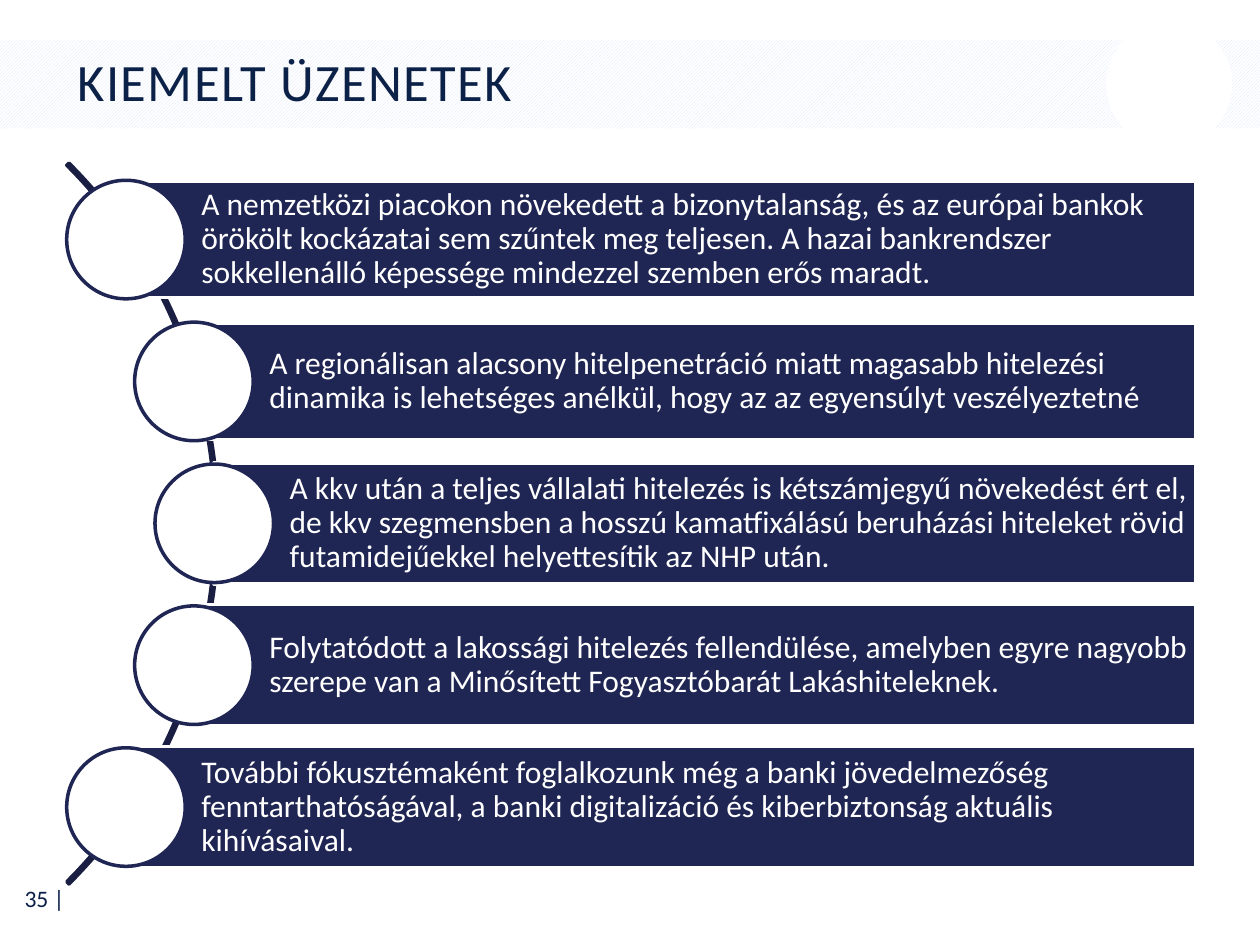
from pptx import Presentation
from pptx.dml.color import RGBColor
from pptx.enum.dml import MSO_PATTERN
from pptx.enum.shapes import MSO_SHAPE
from pptx.enum.text import MSO_ANCHOR, PP_ALIGN
from pptx.util import Cm, Pt

RECTANGLE, ELLIPSE, ARC = MSO_SHAPE.RECTANGLE, MSO_SHAPE.OVAL, MSO_SHAPE.BLOCK_ARC
LEFT, RIGHT = PP_ALIGN.LEFT, PP_ALIGN.RIGHT
MIDDLE = MSO_ANCHOR.MIDDLE
DIAGONAL = MSO_PATTERN.LIGHT_UPWARD_DIAGONAL

NAVY, INK, DARK, WHITE, PALE = "202653", "0C2148", "1A1E42", "FFFFFF", "DAE5F9"
CIRCLE_SIZE = 2.39
BAR_RIGHT = 24.1
FIRST_CENTRE, ROW_PITCH = 4.83, 2.86

MESSAGES = [
    (2.54, 2.34, "A nemzetközi piacokon növekedett a bizonytalanság, és az európai bankok "
     "örökölt kockázatai sem szűntek meg teljesen. A hazai bankrendszer "
     "sokkellenálló képessége mindezzel szemben erős maradt."),
    (3.91, 2.34, "A regionálisan alacsony hitelpenetráció miatt magasabb hitelezési "
     "dinamika is lehetséges anélkül, hogy az az egyensúlyt veszélyeztetné"),
    (4.32, 2.44, "A kkv után a teljes vállalati hitelezés is kétszámjegyű növekedést ért el, "
     "de kkv szegmensben a hosszú kamatfixálású beruházási hiteleket rövid "
     "futamidejűekkel helyettesítik az NHP után."),
    (3.91, 2.44, "Folytatódott a lakossági hitelezés fellendülése, amelyben egyre nagyobb "
     "szerepe van a Minősített Fogyasztóbarát Lakáshiteleknek."),
    (2.54, 2.44, "További fókusztémaként foglalkozunk még a banki jövedelmezőség "
     "fenntarthatóságával, a banki digitalizáció és kiberbiztonság aktuális "
     "kihívásaival."),
]


def colour(value):
    return RGBColor.from_string(value)


def set_all(target, values):
    for name, value in values.items():
        setattr(target, name, value)


def add_shape(page, kind, place, fill=None, line=None):
    shape = page.shapes.add_shape(kind, *map(Cm, place))
    shape.shadow.inherit = False
    if fill:
        shape.fill.solid()
        shape.fill.fore_color.rgb = colour(fill)
    else:
        shape.fill.background()
    if line:
        shape.line.color.rgb = colour(line)
        shape.line.width = Pt(2)
    else:
        shape.line.fill.background()
    return shape


def write(box, text, size, ink, align=LEFT, spacing=1.0, frame_format=None):
    frame = box.text_frame
    set_all(frame, {"word_wrap": True, "vertical_anchor": MIDDLE, **(frame_format or {})})
    para = frame.paragraphs[0]
    set_all(para, {"alignment": align, "line_spacing": spacing})
    span = para.add_run()
    span.text = text
    set_all(span.font, {"name": "Calibri", "size": Pt(size)})
    span.font.color.rgb = colour(ink)
    return span


def add_text(page, place, *content, **options):
    box = page.shapes.add_textbox(*map(Cm, place))
    return write(box, *content, **options)


def add_header(page):
    band = add_shape(page, RECTANGLE, (0, 0.81, 25.4, 1.78))
    band.fill.patterned()
    band.fill.pattern = DIAGONAL
    band.fill.fore_color.rgb = colour(PALE)
    band.fill.back_color.rgb = colour(WHITE)
    add_shape(page, ELLIPSE, (22.3, 0.43, 2.54, 2.54), WHITE)
    title = add_text(page, (1.32, 0.86, 21.13, 1.7), "KIEMELT ÜZENETEK", 30, INK, spacing=0.9)
    title._r.get_or_add_rPr().set("spc", "80")


def add_arc(page):
    arc = add_shape(page, ARC, (-16.15, 0.28, 20.55, 20.55), line=DARK)
    for index, value in enumerate((189, 27, 0.003)):
        arc.adjustments[index] = value


def add_message(page, centre_x, centre_y, height, text):
    place = (centre_x, centre_y - height / 2, BAR_RIGHT - centre_x, height)
    bar = add_shape(page, RECTANGLE, place, NAVY, WHITE)
    margins = {"margin_left": Cm(1.52)}
    margins.update({f"margin_{side}": Cm(0.13) for side in ("top", "right", "bottom")})
    write(bar, text, 18, WHITE, spacing=0.9, frame_format=margins)
    radius = CIRCLE_SIZE / 2
    place = (centre_x - radius, centre_y - radius, CIRCLE_SIZE, CIRCLE_SIZE)
    add_shape(page, ELLIPSE, place, WHITE, NAVY)


def main():
    deck = Presentation()
    set_all(deck, {"slide_width": Cm(25.4), "slide_height": Cm(19.05)})
    page = deck.slides.add_slide(deck.slide_layouts[6])
    add_text(page, (0.03, 17.63, 1.52, 0.94), "35 |", 13.5, INK, align=RIGHT)
    add_header(page)
    add_arc(page)
    for row, (centre_x, height, text) in enumerate(MESSAGES):
        add_message(page, centre_x, FIRST_CENTRE + row * ROW_PITCH, height, text)
    deck.save("out.pptx")


if __name__ == "__main__":
    main()
